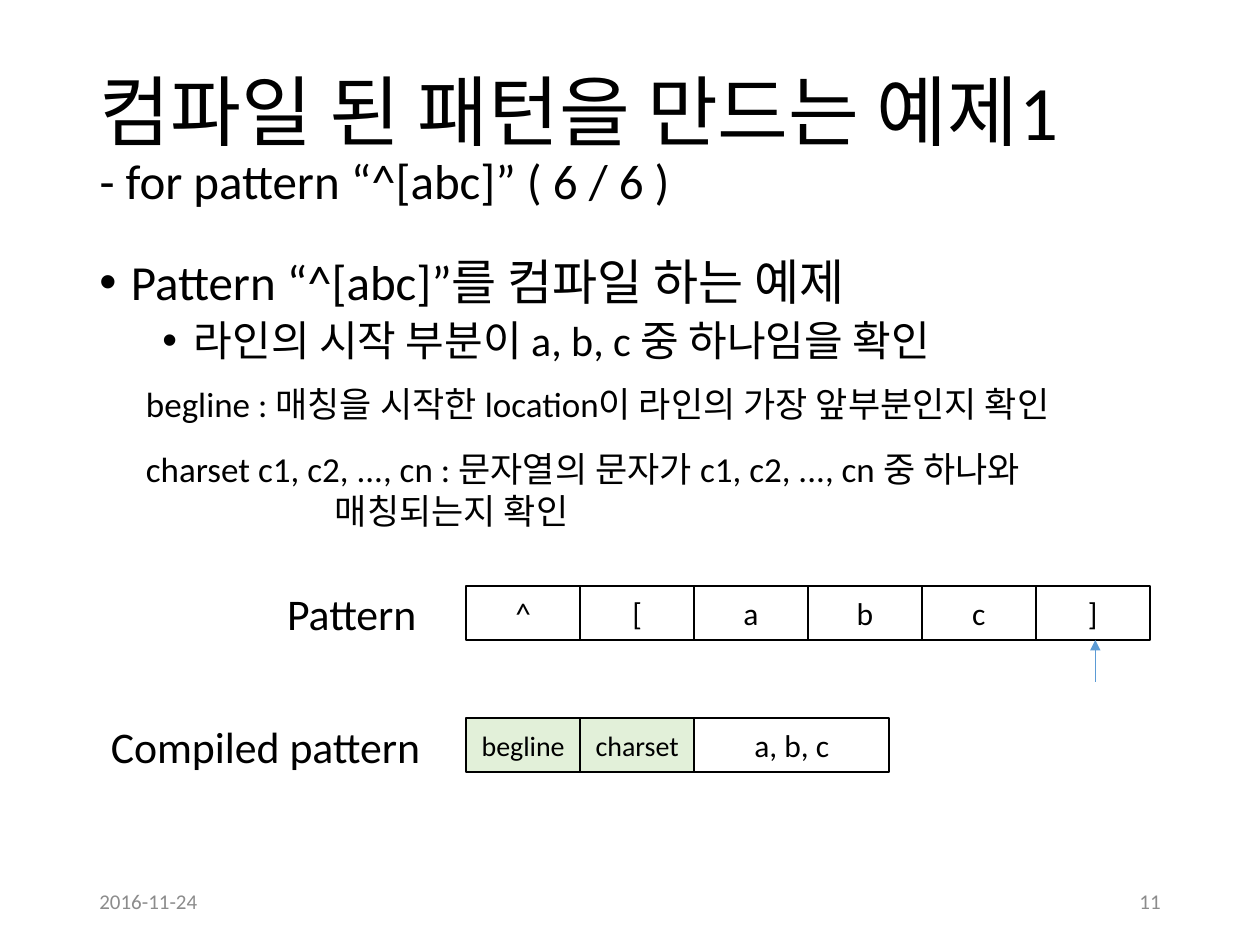
from dataclasses import dataclass

from lxml import etree
from pptx import Presentation
from pptx.dml.color import RGBColor
from pptx.enum.shapes import MSO_CONNECTOR, MSO_SHAPE
from pptx.enum.text import MSO_ANCHOR, MSO_AUTO_SIZE, PP_ALIGN
from pptx.oxml.ns import qn
from pptx.util import Pt

RECTANGLE = MSO_SHAPE.RECTANGLE
STRAIGHT = MSO_CONNECTOR.STRAIGHT
TOP, MIDDLE = MSO_ANCHOR.TOP, MSO_ANCHOR.MIDDLE
LEFT, CENTER, RIGHT = PP_ALIGN.LEFT, PP_ALIGN.CENTER, PP_ALIGN.RIGHT
NO_AUTOFIT = MSO_AUTO_SIZE.NONE


@dataclass(frozen=True)
class Theme:
    font: str = "Calibri"
    ink: str = "000000"
    muted: str = "8C8C8C"
    accent: str = "5B9BD5"
    opcode: str = "E2F0D9"
    title: int = 44
    subtitle: int = 28
    bullet: int = 28
    sub_bullet: int = 24
    label: int = 25
    note: int = 20
    cell: int = 18
    opcode_cell: int = 16
    footer: int = 12


THEME = Theme()

TITLE = "컴파일 된 패턴을 만드는 예제1"
SUBTITLE = "- for pattern “^[abc]” ( 6 / 6 )"
BULLETS = [
    ("Pattern “^[abc]”를 컴파일 하는 예제", THEME.bullet, 18, 10),
    ("라인의 시작 부분이 a, b, c 중 하나임을 확인", THEME.sub_bullet, 54, 5),
]
TEXTS = [
    ("Pattern", (157, 331.9, 183.6, 37.4), THEME.label, THEME.ink, TOP, LEFT),
    ("Compiled pattern", (56.2, 407.5, 209.5, 37.4), THEME.label, THEME.ink, TOP, LEFT),
    ("begline : 매칭을 시작한 location이 라인의 가장 앞부분인지 확인",
     (76.3, 215.3, 591.1, 31.7), THEME.note, THEME.ink, TOP, LEFT),
    ("charset c1, c2, ..., cn : 문자열의 문자가 c1, c2, ..., cn 중 하나와\v\t\t\t매칭되는지 확인",
     (76.3, 252, 622.1, 55.4), THEME.note, THEME.ink, TOP, LEFT),
    ("2016-11-24", (49.7, 500.4, 162, 28.8), THEME.footer, THEME.muted, MIDDLE, LEFT),
    ("11", (508.3, 500.4, 162, 28.8), THEME.footer, THEME.muted, MIDDLE, RIGHT),
]

CELL_LEFT, CELL_WIDTH, CELL_HEIGHT = 266.4, 65.1, 30.9
PATTERN_TOP, COMPILED_TOP = 334.8, 410.4
PATTERN = [(symbol, CELL_WIDTH, THEME.cell, None) for symbol in "^[abc]"]
COMPILED = [
    ("begline", CELL_WIDTH, THEME.opcode_cell, THEME.opcode),
    ("charset", CELL_WIDTH, THEME.opcode_cell, THEME.opcode),
    ("a, b, c", 111.6, THEME.cell, None),
]
POINTER_X, POINTER_LENGTH = 625.9, 23.8


def style_font(font, size, color=THEME.ink):
    font.name = THEME.font
    font.size = Pt(size)
    font.color.rgb = RGBColor.from_string(color)


def place(shape, left, top, width, height):
    shape.left, shape.top = Pt(left), Pt(top)
    shape.width, shape.height = Pt(width), Pt(height)


def write(shape, text, size, color, anchor, align):
    frame = shape.text_frame
    frame.word_wrap = True
    frame.vertical_anchor = anchor
    para = frame.paragraphs[0]
    para.text = text
    para.alignment = align
    style_font(para.font, size, color)


def add_title(page):
    title = page.shapes.title
    place(title, 49.7, 28.8, 620.6, 104.4)
    frame = title.text_frame
    frame.auto_size = NO_AUTOFIT
    frame.vertical_anchor = MIDDLE
    para = frame.paragraphs[0]
    para.alignment = LEFT
    para.line_spacing = 0.9
    span = para.add_run()
    span.text = TITLE
    style_font(span.font, THEME.title)
    para.add_line_break()
    span = para.add_run()
    span.text = SUBTITLE
    style_font(span.font, THEME.subtitle)


def add_bullets(page):
    box = page.shapes.add_textbox(Pt(49.7), Pt(144), Pt(620.6), Pt(342.7))
    frame = box.text_frame
    frame.word_wrap = True
    for index, (text, size, margin, space) in enumerate(BULLETS):
        para = frame.add_paragraph() if index else frame.paragraphs[0]
        para.text = text
        para.level = index
        para.line_spacing = 0.9
        para.space_before = Pt(space)
        style_font(para.font, size)
        properties = para._p.get_or_add_pPr()
        properties.set("marL", str(Pt(margin)))
        properties.set("indent", str(-Pt(18)))
        bullet_font = etree.Element(qn("a:buFont"), typeface="Arial")
        bullet = etree.Element(qn("a:buChar"), char="•")
        properties.find(qn("a:defRPr")).addprevious(bullet_font)
        bullet_font.addnext(bullet)


def add_cells(page, cells, top):
    left = CELL_LEFT
    for text, width, size, fill in cells:
        cell = page.shapes.add_shape(RECTANGLE, Pt(left), Pt(top), Pt(width), Pt(CELL_HEIGHT))
        cell.shadow.inherit = False
        if fill:
            cell.fill.solid()
            cell.fill.fore_color.rgb = RGBColor.from_string(fill)
        else:
            cell.fill.background()
        cell.line.color.rgb = RGBColor.from_string(THEME.ink)
        cell.line.width = Pt(1)
        write(cell, text, size, THEME.ink, MIDDLE, CENTER)
        left += width


def add_pointer(page):
    tip = PATTERN_TOP + CELL_HEIGHT
    pointer = page.shapes.add_connector(
        STRAIGHT, Pt(POINTER_X), Pt(tip + POINTER_LENGTH), Pt(POINTER_X), Pt(tip))
    pointer.line.color.rgb = RGBColor.from_string(THEME.accent)
    pointer.line.width = Pt(0.5)
    etree.SubElement(pointer.line._get_or_add_ln(), qn("a:tailEnd"), type="triangle")
    etree.SubElement(pointer._element.spPr, qn("a:effectLst"))


def main():
    deck = Presentation()
    deck.slide_width, deck.slide_height = Pt(720), Pt(540)
    page = deck.slides.add_slide(deck.slide_layouts[5])
    add_title(page)
    add_bullets(page)
    for text, area, size, color, anchor, align in TEXTS:
        box = page.shapes.add_textbox(*map(Pt, area))
        write(box, text, size, color, anchor, align)
    add_cells(page, PATTERN, PATTERN_TOP)
    add_pointer(page)
    add_cells(page, COMPILED, COMPILED_TOP)
    deck.save("out.pptx")


if __name__ == "__main__":
    main()
